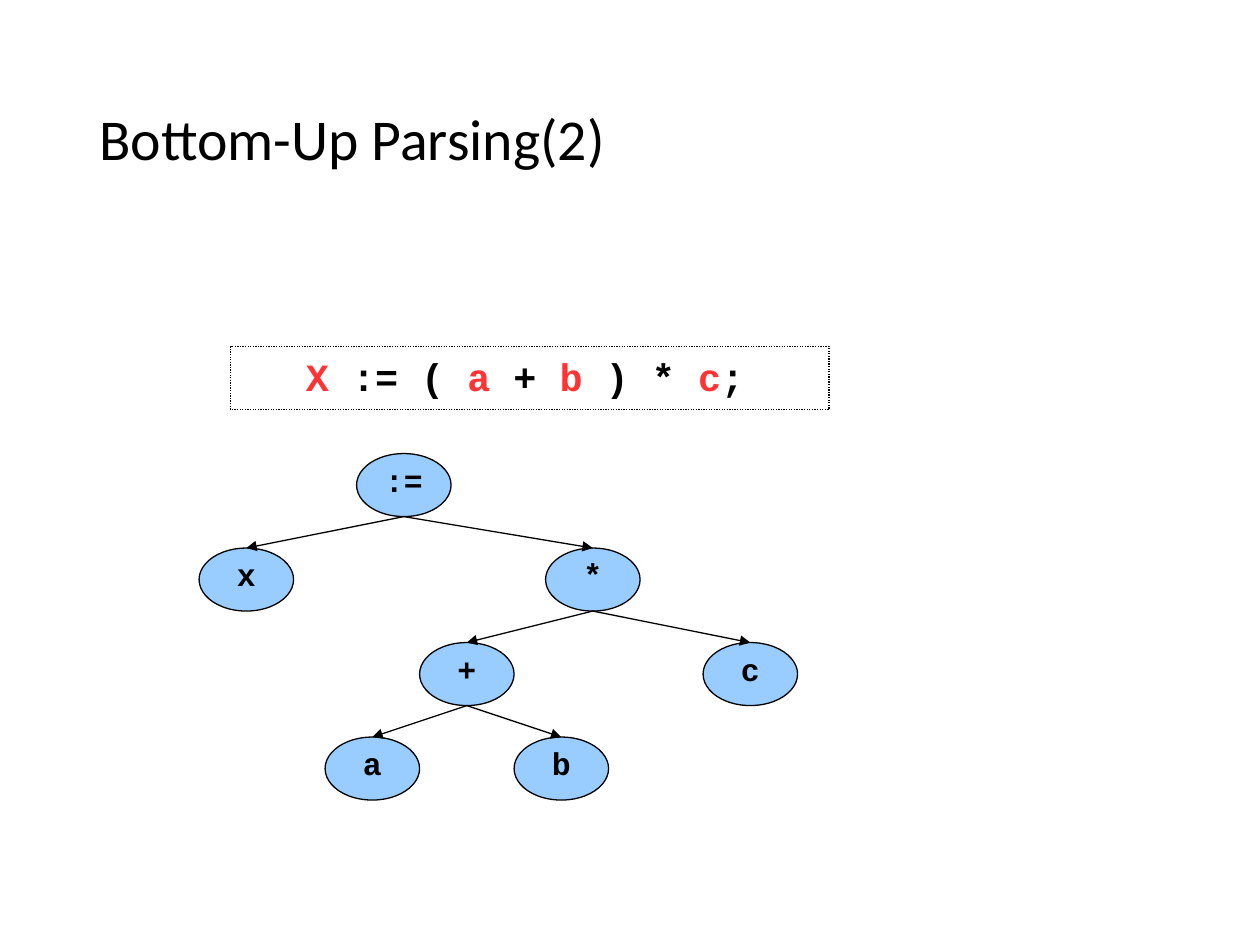
from dataclasses import dataclass
from pptx import Presentation as Deck
from pptx.dml.color import RGBColor as RGB
from pptx.enum.dml import MSO_LINE as Dash
from pptx.enum.shapes import MSO_CONNECTOR as Link, MSO_SHAPE as Kind
from pptx.enum.text import MSO_ANCHOR as Anchor, MSO_AUTO_SIZE as Fit, PP_ALIGN as Align
from pptx.oxml.ns import qn
from pptx.oxml.xmlchemy import OxmlElement as Tag
from pptx.util import Inches, Pt


@dataclass(frozen=True)
class Theme:
    ink: RGB = RGB(0x00, 0x00, 0x00)
    paper: RGB = RGB(0xFF, 0xFF, 0xFF)
    node: RGB = RGB(0x99, 0xCC, 0xFF)
    name: RGB = RGB(0xFF, 0x33, 0x33)
    rule: Pt = Pt(0.75)
    head: tuple = ("Calibri", Pt(33), False)
    code: tuple = ("Courier New", Pt(22), True)
    sign: tuple = ("Courier New", Pt(18), True)


def apply(item, form):
    for key, value in form.items():
        setattr(item, key, value)


class Page:
    def __init__(self, slide, theme):
        self.slide = slide
        self.theme = theme

    def label(self, shape, parts, face, frame, para):
        text = shape.text_frame
        apply(text, frame)
        line = text.paragraphs[0]
        apply(line, para)
        for word, color in parts:
            run = line.add_run()
            run.text = word
            apply(run.font, dict(zip(("name", "size", "bold"), face)))
            run.font.color.rgb = color
        return line

    def shape(self, kind, box, fill):
        shape = self.slide.shapes.add_shape(kind, *map(Inches, box))
        shape.shadow.inherit = False
        shape.fill.solid()
        shape.fill.fore_color.rgb = fill
        self.stroke(shape.line)
        return shape

    def stroke(self, line):
        line.fill.solid()
        line.fill.fore_color.rgb = self.theme.ink
        line.width = self.theme.rule

    def title(self, text, box):
        shape = self.slide.shapes.add_textbox(*map(Inches, box))
        self.label(shape, [(text, self.theme.ink)], self.theme.head,
                   {"word_wrap": True, "vertical_anchor": Anchor.MIDDLE},
                   {"line_spacing": 0.9})

    def code(self, parts, box, indent):
        shape = self.shape(Kind.RECTANGLE, box, self.theme.paper)
        shape.line.dash_style = Dash.ROUND_DOT
        line = self.label(shape, parts, self.theme.code,
                          {"word_wrap": True, "vertical_anchor": Anchor.TOP,
                           "auto_size": Fit.SHAPE_TO_FIT_TEXT},
                          {"alignment": Align.LEFT})
        line._p.get_or_add_pPr().set("marL", str(Inches(indent)))

    def node(self, text, box):
        shape = self.shape(Kind.OVAL, box, self.theme.node)
        self.label(shape, [(text, self.theme.ink)], self.theme.sign,
                   {"word_wrap": False, "vertical_anchor": Anchor.MIDDLE},
                   {"alignment": Align.CENTER, "line_spacing": 0.66})
        return shape

    def arrow(self, top, low):
        start = top.left + top.width // 2, top.top + top.height
        end = low.left + low.width // 2, low.top
        edge = self.slide.shapes.add_connector(Link.STRAIGHT, *start, *end)
        edge.end_connect(low, 0)
        self.stroke(edge.line)
        props = edge.element.spPr
        tip = Tag("a:tailEnd")
        tip.set("type", "triangle")
        props.find(qn("a:ln")).append(tip)
        props.append(Tag("a:effectLst"))


def main():
    deck = Deck()
    deck.slide_width, deck.slide_height = Inches(10), Inches(7.5)
    theme = Theme()
    page = Page(deck.slides.add_slide(deck.slide_layouts[6]), theme)
    page.title("Bottom-Up Parsing(2)", (0.69, 0.4, 8.62, 1.45))

    spots = {":=": (5, 0), "x": (0, 1), "*": (11, 1), "+": (7, 2),
             "a": (4, 3), "b": (10, 3), "c": (16, 2)}
    nodes = {sign: page.node(sign, (1.58 + 0.25 * col, 3.6 + 0.75 * row, 0.75, 0.5))
             for sign, (col, row) in spots.items()}
    tree = {":=": "x*", "*": "+c", "+": "ab"}
    for top, kids in tree.items():
        for kid in kids:
            page.arrow(nodes[top], nodes[kid])

    words = ["X", " := ( ", "a", " + ", "b", " ) * ", "c", ";"]
    parts = [(word, theme.name if word.isalpha() else theme.ink) for word in words]
    page.code(parts, (1.83, 2.75, 4.75, 0.5), 0.5)
    deck.save("out.pptx")


if __name__ == "__main__":
    main()
